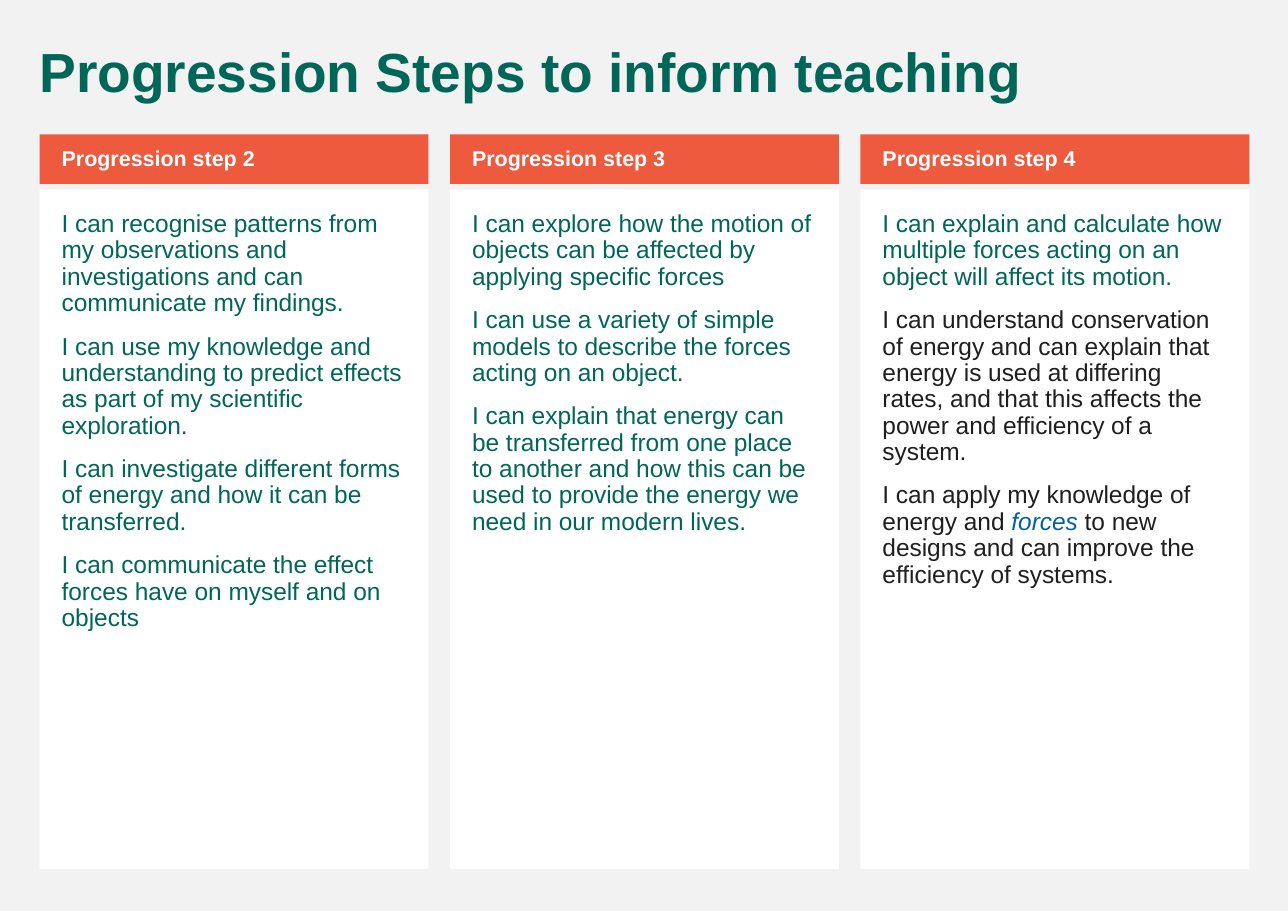
from pptx import Presentation
from pptx.dml.color import RGBColor
from pptx.enum.shapes import MSO_SHAPE
from pptx.enum.text import MSO_ANCHOR, PP_ALIGN
from pptx.util import Inches, Pt

COLORS = {
    "background": "F2F2F2",
    "green": "006758",
    "orange": "ED5A3E",
    "white": "FFFFFF",
    "black": "1F1F1F",
    "blue": "0360A6",
}

TITLE = "Progression Steps to inform teaching"
COLUMNS = [
    ("Progression step 2", [
        [("I can recognise patterns from my observations and investigations and can communicate my findings.", "body")],
        [("I can use my knowledge and understanding to predict effects as part of my scientific exploration.", "body")],
        [("I can investigate different forms of energy and how it can be transferred.", "body")],
        [("I can communicate the effect forces have on myself and on objects", "body")],
    ]),
    ("Progression step 3", [
        [("I can explore how the motion of objects can be affected by applying specific forces", "body")],
        [("I can use a variety of simple models to describe the forces acting on an object.", "body")],
        [("I can explain that energy can be transferred from one place to another and how this can be used to provide the energy we need in our modern lives.", "body")],
    ]),
    ("Progression step 4", [
        [("I can explain and calculate how multiple forces acting on an object will affect its motion.", "body")],
        [("I can understand conservation of energy and can explain that energy is used at differing rates, and that this affects the power and efficiency of a system.", "dark")],
        [("I can apply my knowledge of energy and ", "dark"),
         ("forces", "term"),
         (" to new designs and can improve the efficiency of systems.", "dark")],
    ]),
]

STYLES = {
    "title": ({"size": Pt(36), "bold": True}, "green"),
    "header": ({"size": Pt(14), "bold": True}, "white"),
    "body": ({"size": Pt(16)}, "green"),
    "dark": ({"size": Pt(16)}, "black"),
    "term": ({"size": Pt(16), "italic": True}, "blue"),
}
PARAGRAPH = {"alignment": PP_ALIGN.LEFT, "line_spacing": 0.9, "space_before": Pt(11)}

FIRST_LEFT, LAST_LEFT, WIDTH = 0.36, 7.81, 3.53
HEADER_TOP, HEADER_HEIGHT = 1.22, 0.45
BODY_TOP, BODY_HEIGHT = 1.72, 6.17


def color(name):
    return RGBColor.from_string(COLORS[name])


def set_all(target, values):
    for name, value in values.items():
        setattr(target, name, value)


def write(sp, paragraphs, margins, anchor=MSO_ANCHOR.TOP):
    tf = sp.text_frame
    left, top, right, bottom = map(Inches, margins)
    set_all(tf, {"word_wrap": True, "vertical_anchor": anchor,
                 "margin_left": left, "margin_top": top,
                 "margin_right": right, "margin_bottom": bottom})
    for i, runs in enumerate(paragraphs):
        p = tf.add_paragraph() if i else tf.paragraphs[0]
        set_all(p, PARAGRAPH)
        for text, style in runs:
            r = p.add_run()
            r.text = text
            font, font_color = STYLES[style]
            set_all(r.font, {"name": "Arial", **font})
            r.font.color.rgb = color(font_color)


def add_panel(s, box, fill):
    sp = s.shapes.add_shape(MSO_SHAPE.RECTANGLE, *map(Inches, box))
    sp.shadow.inherit = False
    sp.fill.solid()
    sp.fill.fore_color.rgb = color(fill)
    sp.line.fill.background()
    return sp


def main():
    prs = Presentation()
    prs.slide_width, prs.slide_height = Inches(11.69), Inches(8.27)
    s = prs.slides.add_slide(prs.slide_layouts[6])
    s.background.fill.solid()
    s.background.fill.fore_color.rgb = color("background")

    pitch = (LAST_LEFT - FIRST_LEFT) / (len(COLUMNS) - 1)
    for i, (heading, statements) in enumerate(COLUMNS):
        left = FIRST_LEFT + i * pitch
        body = add_panel(s, (left, BODY_TOP, WIDTH, BODY_HEIGHT), "white")
        write(body, statements, (0.2, 0.2, 0.2, 0.2))
        header = add_panel(s, (left, HEADER_TOP, WIDTH, HEADER_HEIGHT), "orange")
        write(header, [[(heading, "header")]], (0.2, 0.05, 0.1, 0.05), MSO_ANCHOR.MIDDLE)

    title = s.shapes.add_textbox(*map(Inches, (0.26, 0.36, 11.08, 0.65)))
    write(title, [[(TITLE, "title")]], (0.1, 0.05, 0.1, 0.05))
    prs.save("out.pptx")


if __name__ == "__main__":
    main()
